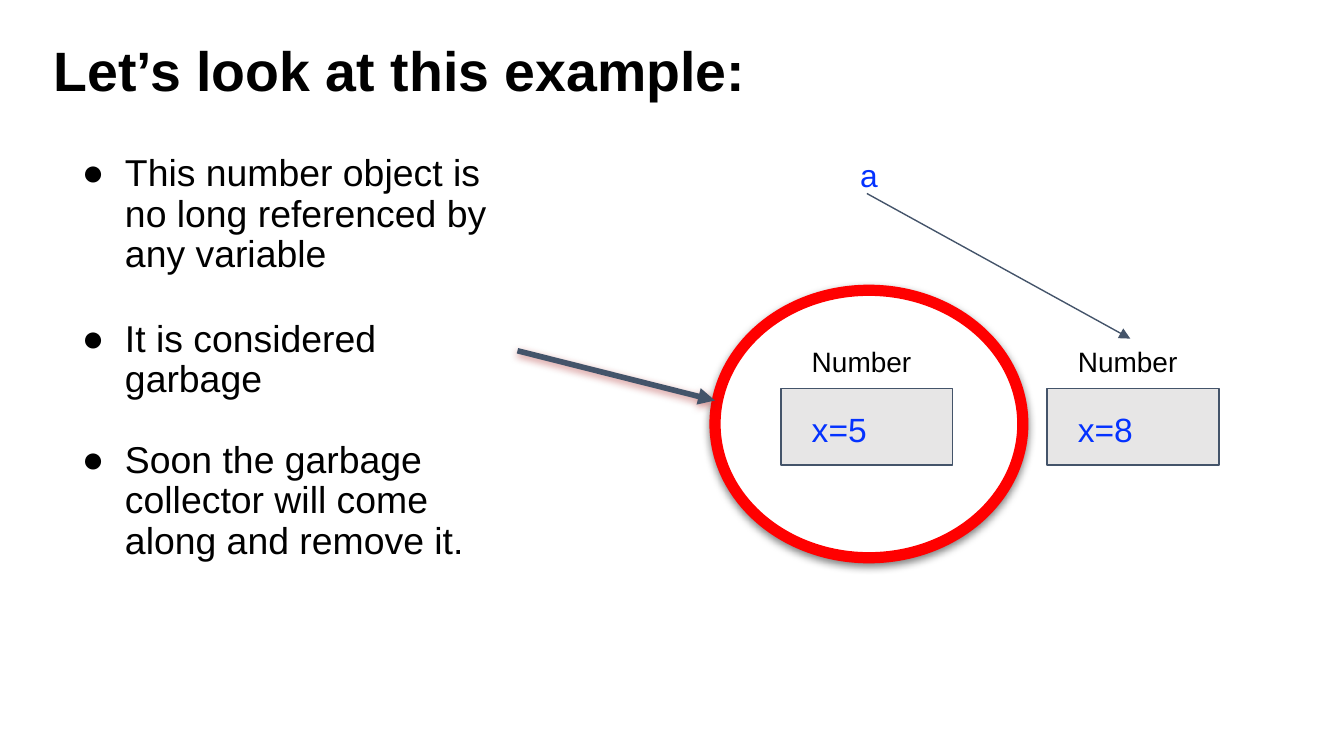
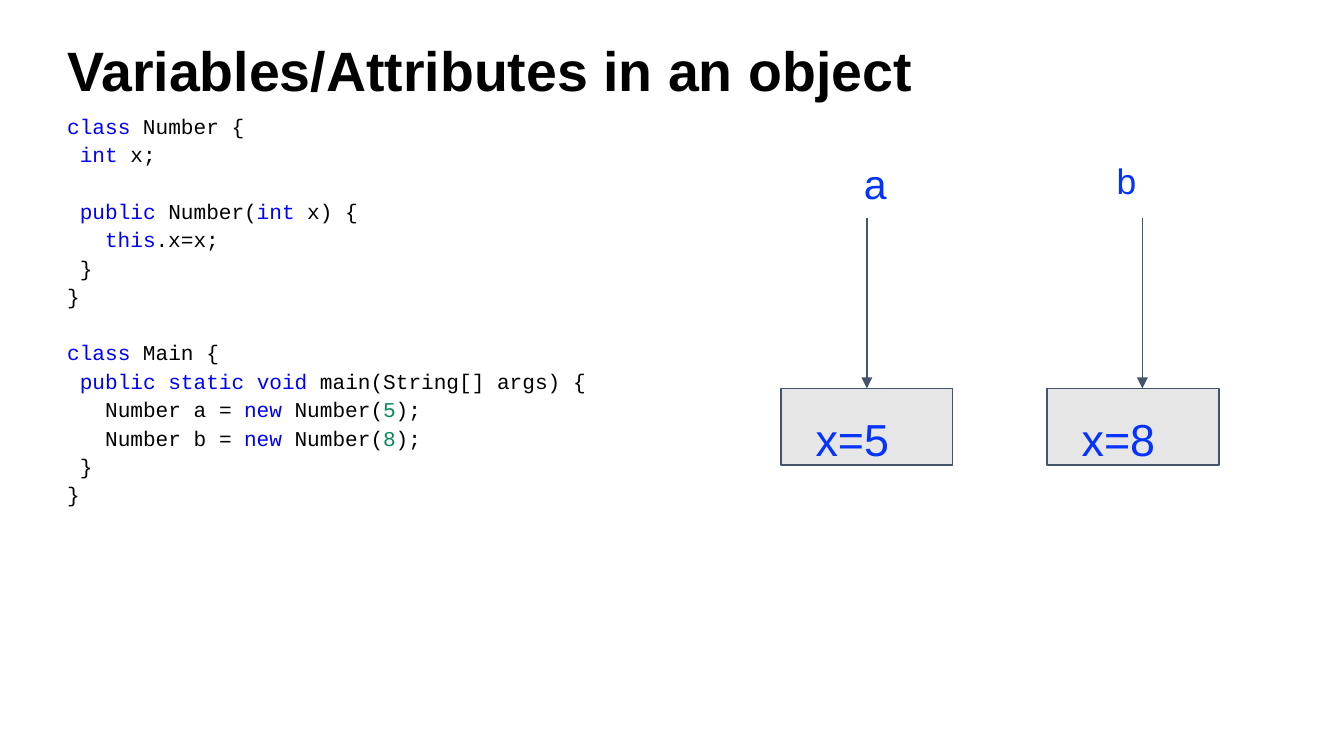
from pptx import Presentation
from pptx.dml.color import RGBColor
from pptx.enum.shapes import MSO_CONNECTOR, MSO_SHAPE
from pptx.enum.text import MSO_ANCHOR, MSO_AUTO_SIZE, PP_ALIGN
from pptx.oxml import parse_xml
from pptx.oxml.ns import nsdecls
from pptx.util import Inches, Pt

COLOURS = {
    "text": "000000", "paper": "FFFFFF", "label": "0432FF", "keyword": "0000FF",
    "number": "09885A", "cell": "E7E6E6", "line": "44546A", "ring": "FF0000",
    "glow": "A31515",
}
RGB = {name: RGBColor.from_string(value) for name, value in COLOURS.items()}
DRAWING = nsdecls("a")
NO_EFFECT = f"<a:effectLst {DRAWING}/>"
SHADOW = (f'<a:effectLst {DRAWING}><a:outerShdw blurRad="57150" dist="19050" dir="5400000" '
          'algn="bl" rotWithShape="0"><a:srgbClr val="{}"><a:alpha val="50000"/></a:srgbClr>'
          "</a:outerShdw></a:effectLst>")

# Object diagram grid: two equal columns
CELL_LEFT, COLUMN_STEP, CELL_WIDTH = 5.81, 1.98, 1.28
CELL_TOP, CELL_HEIGHT = 2.89, 0.57
LABEL_INDENT, LABEL_HEIGHT = 0.16, 0.32
VARIABLE_TOP, VALUE_TOP, CLASS_TOP = 1.12, 3.01, 2.52
VALUES = ["x=5", "x=8"]


def write(shape, inset, lines, size, font="Arial", leading=0.9, bold=False):
    """Fill a shape with lines, each a list of (text, colour) spans and the space before it."""
    frame = shape.text_frame
    frame.word_wrap = True
    frame.auto_size = MSO_AUTO_SIZE.NONE
    frame.margin_left = frame.margin_right = Inches(inset[0])
    frame.margin_top = frame.margin_bottom = Inches(inset[1])
    for index, (spans, before) in enumerate(lines):
        para = frame.paragraphs[0] if index == 0 else frame.add_paragraph()
        para.alignment = PP_ALIGN.LEFT
        para.line_spacing = leading
        para.space_before = Pt(before)
        para.space_after = Pt(0)
        for text, colour in spans:
            span = para.add_run()
            span.text = text
            span.font.name = font
            span.font.size = Pt(size)
            span.font.bold = bold
            span.font.color.rgb = RGB[colour]


def draw_arrow(page, start, end, width=0.75, effect=NO_EFFECT):
    arrow = page.shapes.add_connector(MSO_CONNECTOR.STRAIGHT, *map(Inches, start + end))
    arrow.line.color.rgb = RGB["line"]
    arrow.line.width = Pt(width)
    arrow.line._get_or_add_ln().append(parse_xml(f'<a:tailEnd {DRAWING} type="triangle"/>'))
    arrow._element.spPr.append(parse_xml(effect))


deck = Presentation()
deck.slide_width = Inches(10)
deck.slide_height = deck.slide_width * 9 // 16

# Title and body of each slide
bullets = [
    ([("This number object is no long referenced by any variable", "text")], 0),
    ([("It is considered garbage", "text")], 24),
    ([("Soon the garbage collector will come along and remove it.", "text")], 21.6),
]

# Backticks enclose the coloured words of the code
CODE = """`class` Number {
 `int` x;

 `public` Number(`int` x) {
   `this`.x=x;
 }
}

`class` Main {
 `public` `static` `void` main(String[] args) {
   Number a = `new` Number(`5`);
   Number b = `new` Number(`8`);
 }
}"""
code_lines = []
gap = 0
for row in CODE.splitlines():
    if not row:
        gap = 15
        continue
    spans = []
    for position, piece in enumerate(row.split("`")):
        marked = "number" if piece.isdigit() else "keyword"
        if piece:
            spans.append((piece, marked if position % 2 else "text"))
    code_lines.append((spans, gap))
    gap = 0

pages = []
for title, title_box, body_box in [
    ("Let’s look at this example:", (0.3, 0.31, 6.9, 0.47), (0.48, 1.08, 3.31, 3.37)),
    ("Variables/Attributes in an object", (0.4, 0.31, 9.21, 0.47), (0.4, 0.77, 9.21, 3.09)),
]:
    page = deck.slides.add_slide(deck.slide_layouts[1])
    heading, body = page.placeholders
    for box, place in [(heading, title_box), (body, body_box)]:
        box.left, box.top, box.width, box.height = map(Inches, place)
    write(heading, (0.1, 0.05), [([(title, "text")], 0)], 29.7, bold=True)
    heading.text_frame.vertical_anchor = MSO_ANCHOR.MIDDLE
    pages.append((page, body))

(garbage_page, bullet_body), (code_page, code_body) = pages
write(bullet_body, (0.07, 0.07), bullets, 20)
write(code_body, (0.1, 0.05), code_lines, 11.25, "Courier New", 1.13)

bullet_marks = [f'<a:buClr {DRAWING}><a:srgbClr val="{COLOURS["text"]}"/></a:buClr>',
                f'<a:buFont {DRAWING} typeface="Arial"/>',
                f'<a:buChar {DRAWING} char="●"/>']
for body, margin, indent, marks in [
    (bullet_body, 0.38, -0.32, bullet_marks),
    (code_body, 0, 0, [f"<a:buNone {DRAWING}/>"]),
]:
    for para in body.text_frame.paragraphs:
        properties = para._p.get_or_add_pPr()
        properties.set("marL", str(Inches(margin)))
        properties.set("indent", str(Inches(indent)))
        for mark in marks:
            properties.append(parse_xml(mark))

# Ring around the unreferenced object
ring = garbage_page.shapes.add_shape(
    MSO_SHAPE.OVAL, *map(Inches, (5.32, 2.16, 2.29, 1.99)))
ring.fill.solid()
ring.fill.fore_color.rgb = RGB["paper"]
ring.line.color.rgb = RGB["ring"]
ring.line.width = Pt(6)
ring._element.spPr.append(parse_xml(SHADOW.format(COLOURS["text"])))

# Object cells with their labels: (text, left, top, width, size, colour)
for page, inset, value_size, labels in [
    (garbage_page, 0.07, 18, [("a", 6.33, 0.25, 17)]),
    (code_page, 0.1, 24, [("a", 6.33, 0.25, 22), ("b", 8.21, 0.5, 19)]),
]:
    texts = [(name, left, VARIABLE_TOP, width, size, "label")
             for name, left, width, size in labels]
    for column, value in enumerate(VALUES):
        left = CELL_LEFT + column * COLUMN_STEP
        cell = page.shapes.add_shape(
            MSO_SHAPE.RECTANGLE, *map(Inches, (left, CELL_TOP, CELL_WIDTH, CELL_HEIGHT)))
        cell.shadow.inherit = False
        cell.fill.solid()
        cell.fill.fore_color.rgb = RGB["cell"]
        cell.line.color.rgb = RGB["line"]
        cell.line.width = Pt(0.75)
        texts.append((value, left + LABEL_INDENT, VALUE_TOP, 0.84, value_size, "label"))
        if page is garbage_page:
            texts.append(("Number", left + LABEL_INDENT, CLASS_TOP, 0.93, 15, "text"))
    for text, left, top, width, size, colour in texts:
        label = page.shapes.add_textbox(*map(Inches, (left, top, width, LABEL_HEIGHT)))
        write(label, (inset, inset), [([(text, colour)], 0)], size)

# References from variables to objects
draw_arrow(garbage_page, (3.85, 2.61), (5.32, 2.98), 3, SHADOW.format(COLOURS["glow"]))
draw_arrow(garbage_page, (6.45, 1.44), (8.41, 2.52))
for across in (6.45, 8.5):
    draw_arrow(code_page, (across, 1.62), (across, CELL_TOP))

deck.save("out.pptx")
